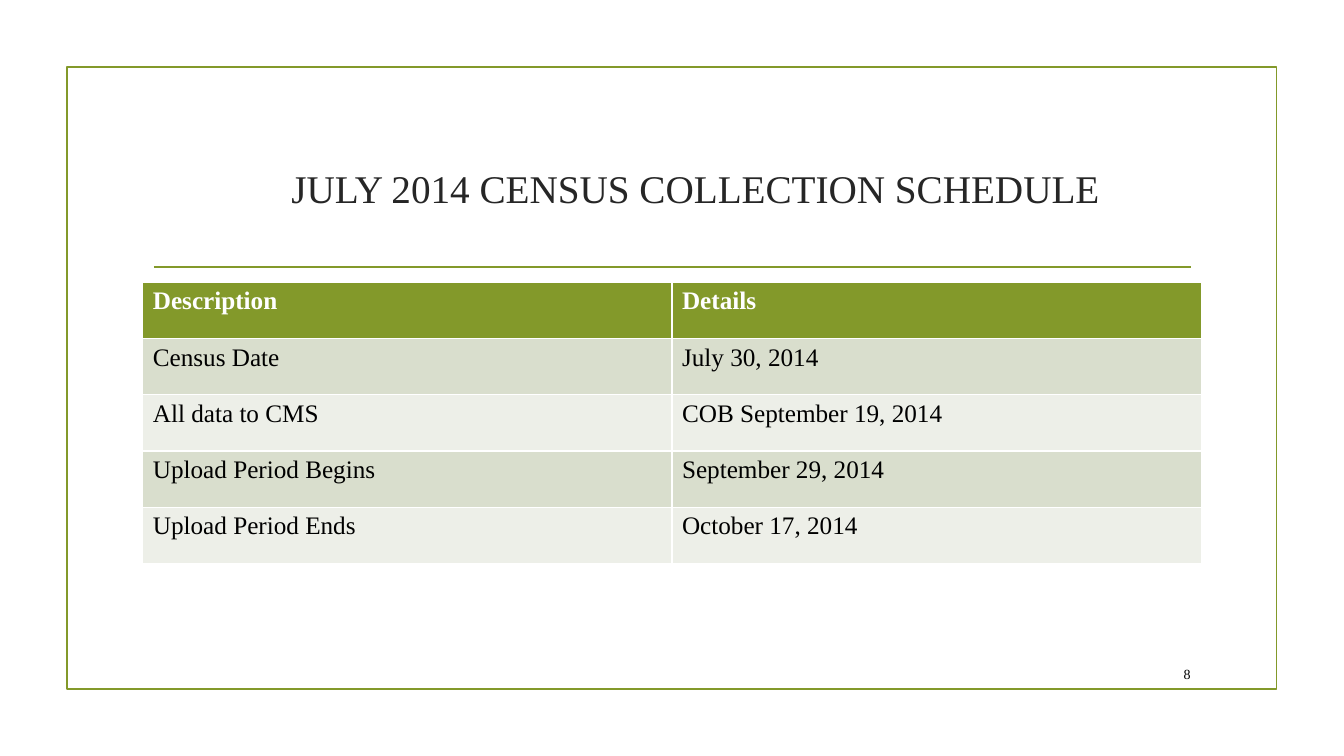
import pptx
import pptx.util
import pptx.dml.color
import pptx.enum.shapes
import pptx.enum.text
import pptx.oxml.ns
import lxml.etree

Pt = pptx.util.Pt
PP_ALIGN = pptx.enum.text.PP_ALIGN
COLORS = {
    "green": "83992A",
    "title": "262626",
    "white": "FFFFFF",
    "black": "000000",
    "band_dark": "D9DECD",
    "band_light": "EDEFE8",
}
ROWS = [
    ("Description", "Details"),
    ("Census Date", "July 30, 2014"),
    ("All data to CMS", "COB September 19, 2014"),
    ("Upload Period Begins", "September 29, 2014"),
    ("Upload Period Ends", "October 17, 2014"),
]


def rgb(name):
    return pptx.dml.color.RGBColor.from_string(COLORS[name])


def write(tf, text, size, color, align=PP_ALIGN.LEFT, bold=False):
    p = tf.paragraphs[0]
    p.text = text
    p.alignment = align
    p.font.name = "Times New Roman"
    p.font.size = Pt(size)
    p.font.bold = bold
    p.font.color.rgb = rgb(color)


prs = pptx.Presentation()
prs.slide_width = Pt(960)
prs.slide_height = Pt(540)
s = prs.slides.add_slide(prs.slide_layouts[6])

frame = s.shapes.add_shape(
    pptx.enum.shapes.MSO_SHAPE.RECTANGLE, Pt(47.8), Pt(48), Pt(864), Pt(444)
)
frame.shadow.inherit = False
frame.fill.background()
frame.line.color.rgb = rgb("green")
frame.line.width = Pt(1.25)

rule = s.shapes.add_connector(
    pptx.enum.shapes.MSO_CONNECTOR.STRAIGHT, Pt(110), Pt(190.6), Pt(850.5), Pt(190.6)
)
rule.line.color.rgb = rgb("green")
rule.line.width = Pt(1.25)
lxml.etree.SubElement(rule._element.spPr, pptx.oxml.ns.qn("a:effectLst"))

title = s.shapes.add_textbox(Pt(101), Pt(110.5), Pt(756), Pt(47.5))
tf = title.text_frame
tf.word_wrap = True
tf.margin_left = Pt(42.5)
tf.vertical_anchor = pptx.enum.text.MSO_ANCHOR.MIDDLE
write(tf, "JULY 2014 CENSUS COLLECTION SCHEDULE", 28, "title", PP_ALIGN.CENTER)

table = s.shapes.add_table(
    len(ROWS), 2, Pt(102), Pt(201.6), Pt(756), Pt(201)
).table
for i, row in enumerate(ROWS):
    header = i == 0
    fill = "green" if header else ("band_light", "band_dark")[i % 2]
    for j, text in enumerate(row):
        cell = table.cell(i, j)
        cell.fill.solid()
        cell.fill.fore_color.rgb = rgb(fill)
        write(cell.text_frame, text, 18, "white" if header else "black", bold=header)

number = s.shapes.add_textbox(Pt(815), Pt(470), Pt(42.5), Pt(22.5))
tf = number.text_frame
tf.word_wrap = True
tf.vertical_anchor = pptx.enum.text.MSO_ANCHOR.MIDDLE
write(tf, "8", 10, "black", PP_ALIGN.RIGHT)

prs.save("out.pptx")
